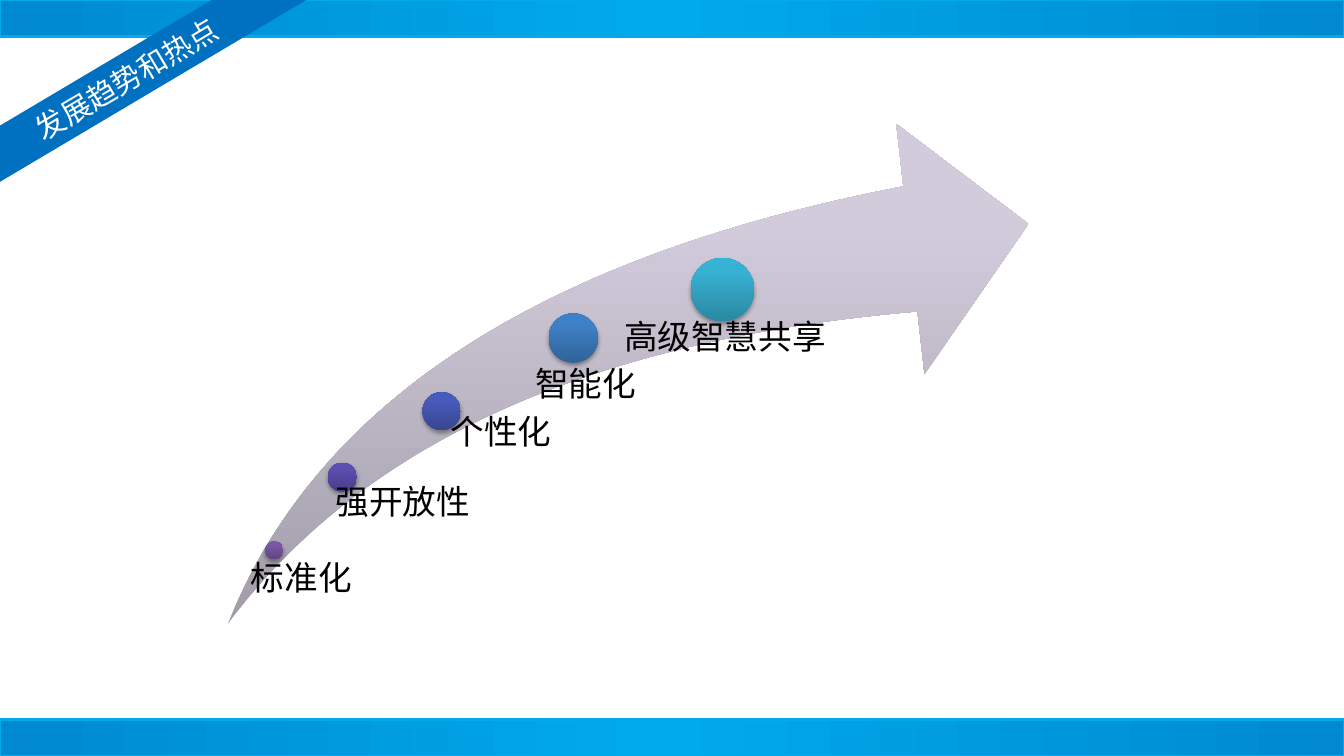
"""Build a slide of development trends rising along a swoosh arrow."""
from lxml import etree
from pptx import Presentation
from pptx import util as u
from pptx.dml.color import RGBColor
from pptx.enum import shapes, text
from pptx.oxml.ns import qn

PX = 9144
WIDE, HIGH, BAR = 1333, 750, 36
FONT = "Noto Sans CJK SC"
WHITE = RGBColor(0xFF, 0xFF, 0xFF)
BLACK = RGBColor(0x00, 0x00, 0x00)
BLUE = RGBColor(0x00, 0x70, 0xC0)
SKY = RGBColor(0x00, 0xAA, 0xEC)
DEEP = RGBColor(0x00, 0x89, 0xCF)
SWOOSH = (RGBColor(0xA1, 0x9C, 0xA8), RGBColor(0xD1, 0xCB, 0xDB), RGBColor(0xD2, 0xCB, 0xDC))
PLUM = (RGBColor(0x5F, 0x44, 0x80), RGBColor(0x7B, 0x58, 0xA6), RGBColor(0x7C, 0x57, 0xA8))
VIOLET = (RGBColor(0x48, 0x3D, 0x89), RGBColor(0x5D, 0x4F, 0xB1), RGBColor(0x5C, 0x4E, 0xB4))
INDIGO = (RGBColor(0x37, 0x46, 0x91), RGBColor(0x47, 0x5B, 0xBC), RGBColor(0x45, 0x5A, 0xBF))
AZURE = (RGBColor(0x30, 0x63, 0x99), RGBColor(0x3F, 0x80, 0xC7), RGBColor(0x3C, 0x80, 0xCB))
TEAL = (RGBColor(0x2A, 0x88, 0xA2), RGBColor(0x37, 0xB1, 0xD2), RGBColor(0x34, 0xB4, 0xD6))

STEPS = [
    ("标准化", (263, 537), 18, (239, 557, 208, 46), PLUM),
    ("强开放性", (325, 459), 29, (318, 482, 276, 66), VIOLET),
    ("个性化", (419, 389), 38, (427, 412, 153, 104), INDIGO),
    ("智能化", (544, 311), 49, (505, 365, 357, 207), AZURE),
    ("高级智慧共享", (685, 256), 63, (586, 318, 404, 159), TEAL),
]


def add(node, tag, **attrs):
    return etree.SubElement(node, qn(tag), attrs)


class Deck:
    """Holds the style and the current slide."""

    def __init__(self):
        self.prs = Presentation()
        self.prs.slide_width = u.Emu(WIDE * PX)
        self.prs.slide_height = u.Emu(HIGH * PX)
        self.slide = self.prs.slides.add_slide(self.prs.slide_layouts[5])

    def box(self, *edges):
        return [u.Emu(edge * PX) for edge in edges]

    def letter(self, shape, words, size, color, pads):
        frame = shape.text_frame
        frame.text = words
        frame.word_wrap = True
        frame.auto_size = text.MSO_AUTO_SIZE.NONE
        (frame.margin_left, frame.margin_top,
         frame.margin_right, frame.margin_bottom) = self.box(*pads)
        run = frame.paragraphs[0].runs[0]
        run.font.size = u.Pt(size)
        run.font.color.rgb = color
        run.font.name = FONT
        add(run._r.get_or_add_rPr(), "a:ea", typeface=FONT)
        return frame

    def blend(self, kind, edges, colors, middle, angle):
        shape = self.slide.shapes.add_shape(kind, *self.box(*edges))
        shape.shadow.inherit = False
        shape.line.fill.background()
        shape.fill.gradient()
        shape.fill.gradient_angle = angle
        stops = shape.element.spPr.find(".//" + qn("a:gsLst"))
        for stop in list(stops):
            stops.remove(stop)
        for place, color in zip((0, middle, 100), colors):
            stop = add(stops, "a:gs", pos=str(place * 1000))
            add(stop, "a:srgbClr", val=str(color))
        return shape

    def bar(self, top):
        shape = self.blend(shapes.MSO_SHAPE.RECTANGLE, (0, top, WIDE, BAR),
                           (DEEP, SKY, DEEP), 49, 0)
        shape.line.color.rgb = SKY
        shape.line.width = u.Pt(2)

    def ribbon(self, words):
        title = self.slide.shapes.title
        self.slide.shapes.element.append(title.element)
        title.left, title.top, title.width, title.height = self.box(-105, 54, 461, 48)
        title.rotation = 329.3
        title.fill.solid()
        title.fill.fore_color.rgb = BLUE
        frame = self.letter(title, words, 21, WHITE, (13, 6, 13, 6))
        frame.vertical_anchor = text.MSO_ANCHOR.MIDDLE
        frame.paragraphs[0].alignment = text.PP_ALIGN.CENTER

    def arrow(self, *edges):
        shape = self.blend(shapes.MSO_SHAPE.SWOOSH_ARROW, edges, SWOOSH, 80, 90)
        shape.adjustments[0] = shape.adjustments[1] = 0.25

    def dot(self, left, top, size, colors):
        shape = self.blend(shapes.MSO_SHAPE.OVAL, (left, top, size, size), colors, 80, 90)
        glow = add(shape.element.spPr.find(qn("a:effectLst")), "a:outerShdw",
                   blurRad=str(int(u.Pt(3.1))), dist=str(int(u.Pt(1.8))),
                   dir="5400000", algn="ctr", rotWithShape="0")
        add(add(glow, "a:srgbClr", val=str(BLACK)), "a:alpha", val="35000")

    def label(self, words, edges, inset):
        shape = self.slide.shapes.add_textbox(*self.box(*edges))
        frame = self.letter(shape, words, 24, BLACK, (inset, 0, 0, 0))
        frame.paragraphs[0].line_spacing = 0.9


def main():
    deck = Deck()
    for top in (0, HIGH - BAR):
        deck.bar(top)
    deck.ribbon("发展趋势和热点")
    deck.arrow(226, 123, 794, 496)
    for words, spot, size, edges, colors in STEPS:
        deck.dot(*spot, size, colors)
        deck.label(words, edges, round(size * 0.53))
    deck.prs.save("out.pptx")


if __name__ == "__main__":
    main()
